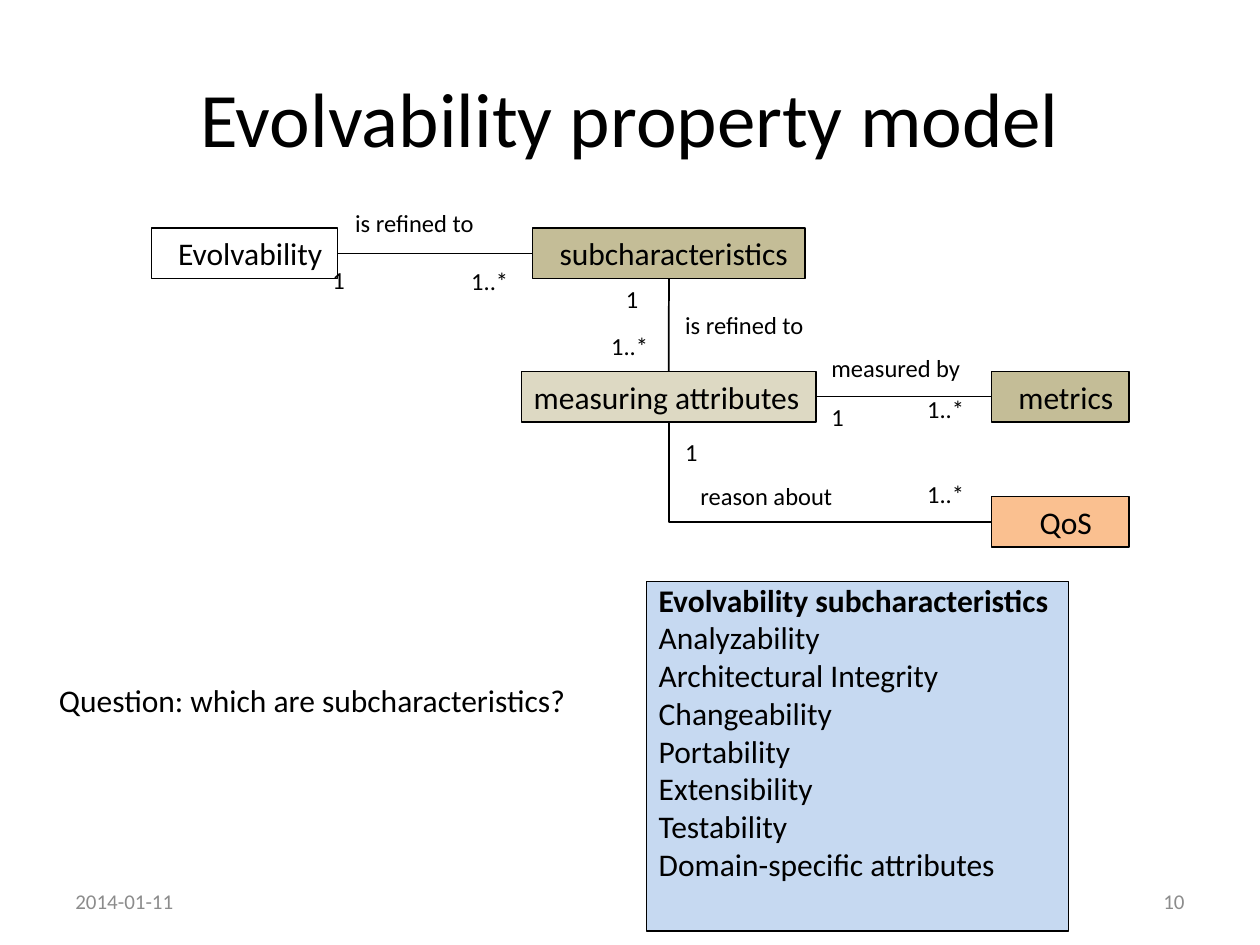
from lxml.etree import SubElement
from pptx import Presentation
from pptx.dml.color import RGBColor
from pptx.enum.shapes import MSO_CONNECTOR, MSO_SHAPE
from pptx.enum.text import MSO_ANCHOR, PP_ALIGN
from pptx.oxml.ns import qn
from pptx.util import Cm, Pt

BLACK = "000000"
GREY = "8C8C8C"
INSET = 0.25
BOX_HEIGHT = 1.02
LABEL_HEIGHT = 0.86
TOP, BOTTOM, LEFT, RIGHT = 0, 2, 1, 3

TITLE = "Evolvability property model"
QUESTION = "Question: which are subcharacteristics?"
DATE = "2014-01-11"
PAGE = "10"

# name: left, top, width, fill, text indent
CONCEPTS = {
    "Evolvability": (3.05, 4.6, 3.76, None, 0.29),
    "subcharacteristics": (10.74, 4.6, 5.49, "C4BD97", 0.29),
    "measuring attributes": (10.51, 7.49, 5.94, "DDD9C3", 0),
    "metrics": (19.99, 7.49, 2.77, "C4BD97", 0.29),
    "QoS": (19.99, 10.01, 2.77, "FAC090", 0.72),
}
RELATIONS = [
    ("Evolvability", RIGHT, "subcharacteristics", LEFT, 1),
    ("measuring attributes", TOP, "subcharacteristics", BOTTOM, 1),
    ("measuring attributes", RIGHT, "metrics", LEFT, 0.75),
]
LABELS = [
    ("is refined to", 2.95, [(6.91, 4.06), (13.56, 6.12)]),
    ("measured by", 3.15, [(16.51, 6.99)]),
    ("reason about", 3.2, [(13.87, 9.58)]),
    ("1", 0.76, [(6.45, 5.21), (12.37, 5.61), (16.51, 7.98), (13.56, 8.69)]),
    ("1..*", 1.27, [(9.25, 5.23), (12.07, 6.55), (18.44, 7.82), (18.44, 9.53)]),
]
SUBCHARACTERISTICS = [
    "Evolvability subcharacteristics",
    "Analyzability",
    "Architectural Integrity",
    "Changeability",
    "Portability",
    "Extensibility",
    "Testability",
    "Domain-specific attributes",
]


def rgb(code):
    return RGBColor.from_string(code)


def write(shape, text, size, color=BLACK, align=PP_ALIGN.LEFT,
          anchor=MSO_ANCHOR.TOP, wrap=True):
    frame = shape.text_frame
    frame.text = text
    frame.word_wrap = wrap
    frame.vertical_anchor = anchor
    for paragraph in frame.paragraphs:
        paragraph.alignment = align
        for run in paragraph.runs:
            run.font.name = "Calibri"
            run.font.size = Pt(size)
            run.font.color.rgb = rgb(color)
    return frame


def add_text(slide, text, left, top, width, height, size, **style):
    box = slide.shapes.add_textbox(Cm(left), Cm(top), Cm(width), Cm(height))
    return write(box, text, size, **style)


def add_box(slide, text, left, top, width, height, fill):
    box = slide.shapes.add_shape(
        MSO_SHAPE.RECTANGLE, Cm(left), Cm(top), Cm(width), Cm(height))
    box.shadow.inherit = False
    if fill:
        box.fill.solid()
        box.fill.fore_color.rgb = rgb(fill)
    else:
        box.fill.background()
    box.line.color.rgb = rgb(BLACK)
    box.line.width = Pt(0.75)
    write(box, text, 18)
    return box


def connect(slide, kind, start, start_side, end, end_side, weight):
    link = slide.shapes.add_connector(kind, 0, 0, 0, 0)
    link.begin_connect(start, start_side)
    link.end_connect(end, end_side)
    link.line.color.rgb = rgb(BLACK)
    link.line.width = Pt(weight)
    SubElement(link._element.spPr, qn("a:effectLst"))
    return link


def connect_corner(slide, start, end):
    link = connect(slide, MSO_CONNECTOR.ELBOW, start, BOTTOM, end, LEFT, 1)
    x1, y1 = start.left + start.width // 2, start.top + start.height
    x2, y2 = end.left, end.top + end.height // 2
    across, down = x2 - x1, y2 - y1
    link.left = (x1 + x2 - down) // 2
    link.top = (y1 + y2 - across) // 2
    link.width, link.height = down, across
    properties = link._element.spPr
    frame = properties.find(qn("a:xfrm"))
    frame.set("rot", "16200000")
    frame.set("flipH", "1")
    properties.find(qn("a:prstGeom")).set("prst", "bentConnector2")


def main():
    deck = Presentation()
    deck.slide_width, deck.slide_height = Cm(25.4), Cm(19.05)
    slide = deck.slides.add_slide(deck.slide_layouts[6])

    add_text(slide, TITLE, 1.27, 0.76, 22.86, 3.18, 44,
             align=PP_ALIGN.CENTER, anchor=MSO_ANCHOR.MIDDLE)
    for text, left, align in [(DATE, 1.27, PP_ALIGN.LEFT),
                              (PAGE, 18.2, PP_ALIGN.RIGHT)]:
        add_text(slide, text, left, 17.66, 5.93, 1.01, 12, color=GREY,
                 align=align, anchor=MSO_ANCHOR.MIDDLE)

    concepts = {}
    for name, (left, top, width, fill, indent) in CONCEPTS.items():
        box = add_box(slide, name, left, top, width, BOX_HEIGHT, fill)
        box.text_frame.margin_left = Cm(INSET + indent)
        box.text_frame.margin_right = 0
        concepts[name] = box

    for start, start_side, end, end_side, weight in RELATIONS:
        connect(slide, MSO_CONNECTOR.STRAIGHT, concepts[start], start_side,
                concepts[end], end_side, weight)
    connect_corner(slide, concepts["measuring attributes"], concepts["QoS"])

    for text, width, places in LABELS:
        for left, top in places:
            add_text(slide, text, left, top, width, LABEL_HEIGHT, 14, wrap=False)

    add_text(slide, QUESTION, 0.94, 13.61, 10.87, BOX_HEIGHT, 18, wrap=False)
    answer = add_box(slide, "\n".join(SUBCHARACTERISTICS),
                     13.03, 11.73, 8.51, 7.04, "C6D9F1")
    heading = answer.text_frame.paragraphs[0]
    heading.line_spacing = 0.8
    heading.runs[0].font.bold = True

    deck.save("out.pptx")


if __name__ == "__main__":
    main()
